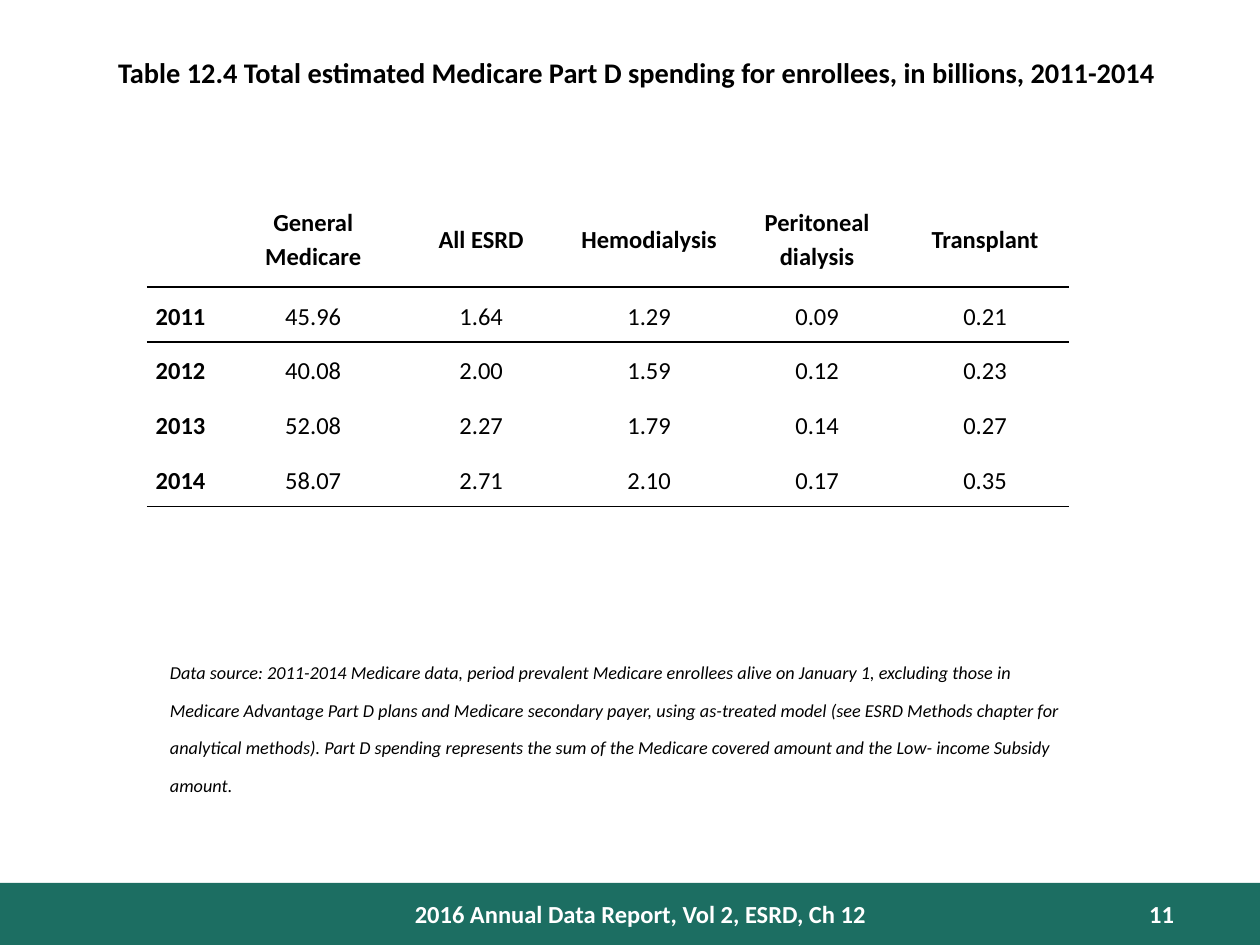
from lxml import etree
from pptx import Presentation
from pptx.dml.color import RGBColor
from pptx.enum import shapes, text
from pptx.oxml import ns
from pptx.util import Pt

BLACK = RGBColor(0x00, 0x00, 0x00)
WHITE = RGBColor(0xFF, 0xFF, 0xFF)
GREEN = RGBColor(0x1C, 0x6E, 0x62)
PLAIN = "{2D5ABB26-0587-4C30-8999-92F81FD0307C}"
LEFT, MID, RIGHT = text.PP_ALIGN.LEFT, text.PP_ALIGN.CENTER, text.PP_ALIGN.RIGHT

TITLE = "Table 12.4 Total estimated Medicare Part D spending for enrollees, in billions, 2011-2014"
SOURCE = (
    "Data source: 2011-2014 Medicare data, period prevalent Medicare enrollees alive on "
    "January 1, excluding those in Medicare Advantage Part D plans and Medicare secondary "
    "payer, using as-treated model (see ESRD Methods chapter for analytical methods). Part D "
    "spending represents the sum of the Medicare covered amount and the Low- income Subsidy amount."
)
ROWS = [
    ["", "General Medicare", "All ESRD", "Hemodialysis", "Peritoneal dialysis", "Transplant"],
    ["2011", "45.96", "1.64", "1.29", "0.09", "0.21"],
    ["2012", "40.08", "2.00", "1.59", "0.12", "0.23"],
    ["2013", "52.08", "2.27", "1.79", "0.14", "0.27"],
    ["2014", "58.07", "2.71", "2.10", "0.17", "0.35"],
]


def apply(item, vals):
    """Set each attribute in a dict of format values."""
    for key, val in vals.items():
        setattr(item, key, val)


def write(frame, words, size, color=BLACK, align=LEFT, raised=False, **style):
    """Fill a text frame with one styled paragraph and return it."""
    para = frame.paragraphs[0]
    para.alignment = align
    run = para.add_run()
    run.text = words
    apply(run.font, {"name": "Calibri", "size": Pt(size), **style})
    run.font.color.rgb = color
    if raised:
        run.font._element.set("baseline", "30000")
    return para


def add_title(slide):
    """Place the title in its placeholder."""
    title = slide.shapes.title
    apply(title, {"left": Pt(0), "top": Pt(24.5), "width": Pt(720), "height": Pt(30)})
    frame = title.text_frame
    apply(frame, {"margin_left": Pt(14.4), "word_wrap": True,
                  "vertical_anchor": text.MSO_ANCHOR.TOP,
                  "auto_size": text.MSO_AUTO_SIZE.SHAPE_TO_FIT_TEXT})
    write(frame, TITLE, 28, align=MID, raised=True, bold=True)


def add_text(slide, box, words, size, **style):
    """Add a wrapped text box."""
    frame = slide.shapes.add_textbox(*map(Pt, box)).text_frame
    frame.word_wrap = True
    write(frame, words, size, **style)
    return frame


def add_band(slide):
    """Add the footer band."""
    band = slide.shapes.add_shape(
        shapes.MSO_SHAPE.RECTANGLE, Pt(0), Pt(504.5), Pt(720), Pt(36))
    band.shadow.inherit = False
    band.fill.solid()
    band.fill.fore_color.rgb = GREEN
    band.line.fill.background()


def add_rule(cell, side):
    """Draw a black line on one side of a cell."""
    line = etree.Element(ns.qn(f"a:{side}"), w=str(Pt(1)))
    fill = etree.SubElement(line, ns.qn("a:solidFill"))
    etree.SubElement(fill, ns.qn("a:srgbClr"), val=str(BLACK))
    cell._tc.get_or_add_tcPr().insert(0, line)


def fill_cell(cell, words, row, col):
    """Format one cell by its place in the table."""
    pad = Pt(5) if row else Pt(0)
    apply(cell, {"margin_left": pad, "margin_right": pad, "margin_top": 0,
                 "margin_bottom": 0, "vertical_anchor": text.MSO_ANCHOR.MIDDLE})
    cell.fill.background()
    if words:
        para = write(cell.text_frame, words, 14, align=MID if col else LEFT,
                     bold=row == 0 or col == 0)
        para.line_spacing = 1.15
    if row in (0, len(ROWS) - 1):
        add_rule(cell, "lnB")
    if row == 1:
        add_rule(cell, "lnT")


def add_grid(slide):
    """Add the spending table."""
    frame = slide.shapes.add_table(
        len(ROWS), len(ROWS[0]), Pt(84), Pt(108), Pt(527), Pt(181.6))
    grid = frame.table
    apply(grid, {"first_row": False, "horz_banding": False})
    grid._tbl.tblPr.find(ns.qn("a:tableStyleId")).text = PLAIN
    for i, col in enumerate(grid.columns):
        col.width = Pt(96) if i else Pt(47)
    for i, row in enumerate(grid.rows):
        row.height = Pt(31.4) if i else Pt(56)
        for j, words in enumerate(ROWS[i]):
            fill_cell(grid.cell(i, j), words, i, j)


def main():
    """Build and save the slide."""
    deck = Presentation()
    apply(deck, {"slide_width": Pt(720), "slide_height": Pt(540)})
    slide = deck.slides.add_slide(deck.slide_layouts[5])
    add_band(slide)
    add_title(slide)
    foot = {"color": WHITE, "bold": True}
    add_text(slide, (228, 510, 276, 24), "2016 Annual Data Report, Vol 2, ESRD, Ch 12", 14,
             align=MID, **foot)
    add_text(slide, (606, 510, 72, 22), "11", 14, align=RIGHT, **foot)
    note = add_text(slide, (90, 372, 528, 65.5), SOURCE, 18, raised=True, italic=True)
    note.auto_size = text.MSO_AUTO_SIZE.SHAPE_TO_FIT_TEXT
    add_grid(slide)
    deck.save("out.pptx")


if __name__ == "__main__":
    main()
